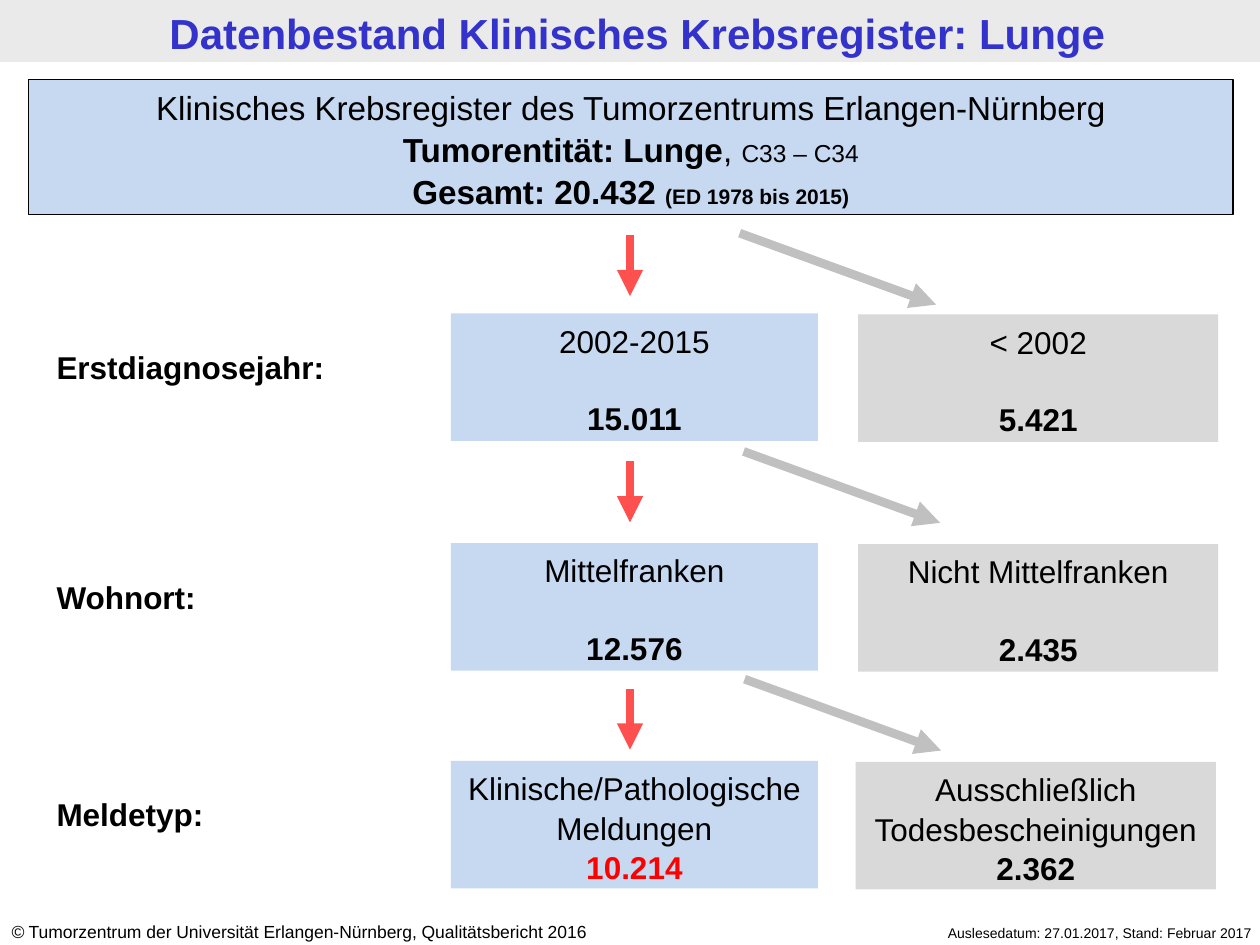
from lxml.etree import SubElement
from pptx import Presentation
from pptx.dml.color import RGBColor
from pptx.enum.shapes import MSO_CONNECTOR, MSO_SHAPE
from pptx.enum.text import MSO_ANCHOR, PP_ALIGN
from pptx.oxml.ns import qn
from pptx.util import Cm, Pt

COLORS = {
    "blue": "C6D9F1", "gray": "D9D9D9", "band": "EAEAEA", "title": "3333CC",
    "black": "000000", "red": "FF0000", "arrow": "FF5050", "side": "C0C0C0",
}


def color(name):
    return RGBColor.from_string(COLORS[name])


class Chart:
    """Holds the font and the slide that the flow chart is drawn on."""

    def __init__(self, slide, font="Arial"):
        self.slide = slide
        self.font = font

    def fill_text(self, shape, paras, size, align, lead=None, gap=0):
        """Each paragraph is a list of (text, style) runs; gap goes above the last."""
        frame = shape.text_frame
        frame.word_wrap = True
        frame.vertical_anchor = MSO_ANCHOR.TOP
        for i, runs in enumerate(paras):
            para = frame.paragraphs[0] if i == 0 else frame.add_paragraph()
            para.alignment = align
            if lead:
                para.line_spacing = lead
            if gap and i == len(paras) - 1:
                para.space_before = Pt(gap)
            for text, style in runs:
                run = para.add_run()
                run.text = text
                font = run.font
                font.name = self.font
                font.size = Pt(style.get("size", size))
                font.bold = style.get("bold", False)
                font.italic = style.get("italic", False)
                font.color.rgb = color(style.get("color", "black"))

    def box(self, x, y, w, h, fill, paras=(), size=18, line=None, gap=0):
        shape = self.slide.shapes.add_shape(
            MSO_SHAPE.RECTANGLE, Cm(x), Cm(y), Cm(w), Cm(h))
        shape.shadow.inherit = False
        shape.fill.solid()
        shape.fill.fore_color.rgb = color(fill)
        if line:
            shape.line.color.rgb = color(line)
            shape.line.width = Pt(0.75)
        else:
            shape.line.fill.background()
        self.fill_text(shape, paras, size, PP_ALIGN.CENTER, 1.05, gap)

    def label(self, x, y, w, h, runs, size=18, align=PP_ALIGN.LEFT):
        shape = self.slide.shapes.add_textbox(Cm(x), Cm(y), Cm(w), Cm(h))
        self.fill_text(shape, [runs], size, align)

    def arrow(self, x, y, dx, dy, tint):
        line = self.slide.shapes.add_connector(
            MSO_CONNECTOR.STRAIGHT, Cm(x), Cm(y), Cm(x + dx), Cm(y + dy))
        line.line.color.rgb = color(tint)
        line.line.width = Pt(5)
        props = line._element.spPr
        SubElement(props.find(qn("a:ln")), qn("a:tailEnd"), type="triangle")
        SubElement(props, qn("a:effectLst"))


BOLD = {"bold": True}

# label, top, kept (text, count, style), dropped (text, count), dropped left, gap
STEPS = [
    ("Erstdiagnosejahr:", 6.32, ("2002-2015", "15.011", BOLD),
     ("< 2002", "5.421"), 17.3, 21.7),
    ("Wohnort:", 10.95, ("Mittelfranken", "12.576", BOLD),
     ("Nicht Mittelfranken", "2.435"), 17.3, 21.7),
    ("Meldetyp:", 15.34,
     ("Klinische/Pathologische Meldungen", "10.214", {"bold": True, "color": "red"}),
     ("Ausschließlich Todesbescheinigungen", "2.362"), 17.25, 0),
]
# top of the red arrow, then start of the gray one
ARROWS = [(4.74, 14.91, 4.7), (9.3, 14.99, 9.1), (13.88, 15.01, 13.69)]


def main():
    deck = Presentation()
    deck.slide_width, deck.slide_height = Cm(25.4), Cm(19.05)
    chart = Chart(deck.slides.add_slide(deck.slide_layouts[6]))

    chart.box(0, 0, 25.4, 1.25, "band")
    chart.label(0.15, 0.03, 25.4, 1.25,
                [("Datenbestand Klinisches Krebsregister: Lunge",
                  {"bold": True, "color": "title"})], 24, PP_ALIGN.CENTER)
    chart.box(0.58, 1.6, 24.28, 2.72, "blue", [
        [("Klinisches Krebsregister des Tumorzentrums Erlangen-Nürnberg", {})],
        [("Tumorentität: Lunge", BOLD), (", ", {}), ("C33 – C34", {"size": 14})],
        [("Gesamt: 20.432 ", BOLD),
         ("(ED 1978 bis 2015)", {"bold": True, "size": 12})],
    ], 19, "black")

    for (name, top, kept, drop, left, gap), (red, x, y) in zip(STEPS, ARROWS):
        chart.arrow(12.7, red, 0, 1.23, "arrow")
        chart.arrow(x, y, 3.96, 1.44, "side")
        chart.label(0.89, top + 0.57, 7, 1.02, [(name, BOLD)])
        text, count, style = kept
        chart.box(9.09, top, 7.4, 2.57, "blue",
                  [[(text, {})], [(count, style)]], gap=gap)
        text, count = drop
        chart.box(left, top + 0.02, 7.26, 2.57, "gray",
                  [[(text, {})], [(count, BOLD)]], gap=gap)

    chart.label(-0.02, 18.44, 13.3, 0.68, [
        ("©", {"italic": True}),
        (" Tumorzentrum der Universität Erlangen-Nürnberg, Qualitätsbericht 2016", {}),
    ], 10)
    chart.label(16.89, 18.52, 8.6, 0.6,
                [("Auslesedatum: 27.01.2017, Stand: Februar 2017", {})],
                8, PP_ALIGN.RIGHT)
    deck.save("out.pptx")


if __name__ == "__main__":
    main()
